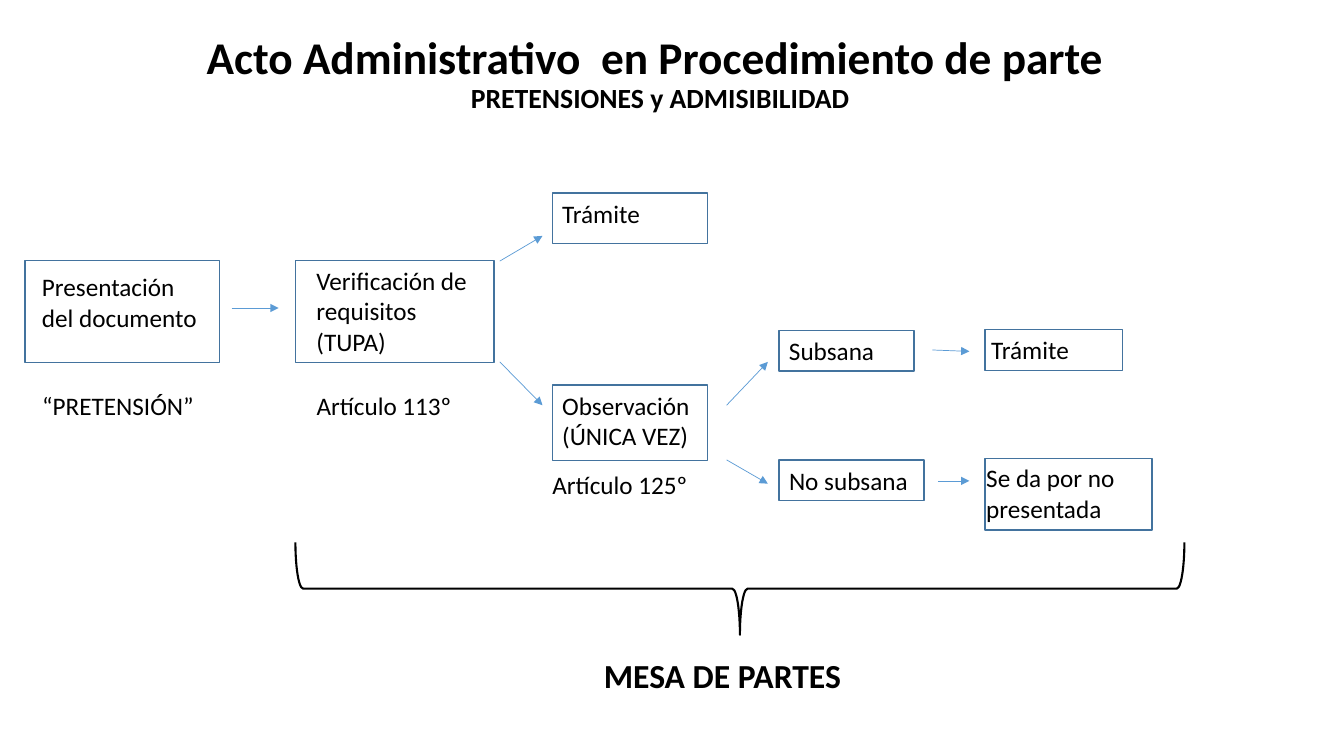
from lxml.etree import SubElement
from pptx import Presentation
from pptx.dml.color import RGBColor
from pptx.enum.shapes import MSO_CONNECTOR, MSO_SHAPE
from pptx.enum.text import MSO_ANCHOR, MSO_AUTO_SIZE, PP_ALIGN
from pptx.oxml.ns import qn
from pptx.util import Pt

FONT = "Calibri"
BLACK, EDGE, ARROW = "000000", "43739E", "5B9BD5"

# Left edges of the columns
FIRST, CHECK, RESULT, REPLY, FINAL = 18, 211, 394.5, 556.5, 703.5

# Left, top, width, height, lines, insets (left, top, right)
STEPS = [
    (FIRST, 186, 139, 73, ["Presentación del documento"], (12, 8, 12)),
    (CHECK, 186, 142, 73, ["Verificación de requisitos (TUPA)"], (15, 3.6, 12)),
    (RESULT, 138, 111, 36, ["Trámite"], (7.2, 3.6, 7.2)),
    (RESULT, 275, 111, 54, ["Observación", "(ÚNICA VEZ)"], (7.2, 3.6, 7.2)),
    (REPLY, 236, 96.5, 29, ["Subsana"], (7.2, 3.6, 7.2)),
    (REPLY, 328.5, 103.5, 29, ["No subsana"], (7.2, 3.6, 7.2)),
    (FINAL, 235.5, 98.5, 29, ["Trámite"], (4.5, 3.6, 4.5)),
    (FINAL, 327.5, 119.5, 51, ["Se da por no presentada"], (1, 3, 14)),
]

# Left, top, width, text
NOTES = [
    (23, 275, 134, "“PRETENSIÓN”"),
    (219, 275, 120, "Artículo 113º"),
    (387.5, 332, 118, "Artículo 125º"),
]

# Start x, start y, end x, end y
ARROWS = [
    (165.5, 220, 199, 220),
    (357, 186.5, 387.5, 168.5),
    (357, 258.5, 387.5, 289.5),
    (519, 289.5, 548.5, 258.5),
    (519, 328.5, 548.5, 345.5),
    (666, 250, 692.5, 251),
    (670, 343.5, 692.5, 343.5),
]


def color(code):
    return RGBColor.from_string(code)


def add_run(para, text, size=18, bold=False):
    run = para.add_run()
    run.text = text
    run.font.name = FONT
    run.font.size = Pt(size)
    run.font.bold = bold
    run.font.color.rgb = color(BLACK)


def add_title(slide):
    title = slide.shapes.title
    title.left, title.top = Pt(111.5), Pt(30)
    title.width, title.height = Pt(720), Pt(55.5)
    frame = title.text_frame
    frame.auto_size = MSO_AUTO_SIZE.NONE
    frame.vertical_anchor = MSO_ANCHOR.BOTTOM
    para = frame.paragraphs[0]
    para.alignment = PP_ALIGN.CENTER
    para.line_spacing = 0.9
    add_run(para, "Acto Administrativo  en Procedimiento de parte ", 32.4, True)
    para.add_line_break()
    add_run(para, "PRETENSIONES y ADMISIBILIDAD", 19.8, True)


def add_outline(slide, kind, left, top, width, height, line, weight):
    shape = slide.shapes.add_shape(kind, Pt(left), Pt(top), Pt(width), Pt(height))
    shape.shadow.inherit = False
    shape.fill.background()
    shape.line.color.rgb = color(line)
    shape.line.width = Pt(weight)
    return shape


def add_step(slide, left, top, width, height, lines, insets):
    box = add_outline(slide, MSO_SHAPE.RECTANGLE, left, top, width, height, EDGE, 1)
    frame = box.text_frame
    frame.word_wrap = True
    frame.vertical_anchor = MSO_ANCHOR.TOP
    frame.margin_left, frame.margin_top, frame.margin_right = map(Pt, insets)
    frame.margin_bottom = 0
    for i, text in enumerate(lines):
        para = frame.add_paragraph() if i else frame.paragraphs[0]
        para.alignment = PP_ALIGN.LEFT
        add_run(para, text)


def add_note(slide, left, top, width, text, size=18, bold=False, align=PP_ALIGN.LEFT):
    box = slide.shapes.add_textbox(Pt(left), Pt(top), Pt(width), Pt(size * 1.2 + 7.2))
    box.text_frame.word_wrap = True
    para = box.text_frame.paragraphs[0]
    para.alignment = align
    add_run(para, text, size, bold)


def add_arrow(slide, *ends):
    link = slide.shapes.add_connector(MSO_CONNECTOR.STRAIGHT, *map(Pt, ends))
    link.line.color.rgb = color(ARROW)
    link.line.width = Pt(0.5)
    SubElement(link.line._get_or_add_ln(), qn("a:tailEnd"), type="triangle")
    SubElement(link._element.spPr, qn("a:effectLst"))


def main():
    deck = Presentation()
    deck.slide_width, deck.slide_height = Pt(960), Pt(540)
    slide = deck.slides.add_slide(deck.slide_layouts[5])

    add_title(slide)

    # Flow of the procedure
    for step in STEPS:
        add_step(slide, *step)
    for note in NOTES:
        add_note(slide, *note)
    for arrow in ARROWS:
        add_arrow(slide, *arrow)

    # Brace over the responsible office
    brace = add_outline(slide, MSO_SHAPE.RIGHT_BRACE, 495.5, 103, 66, 635, BLACK, 1.5)
    brace.rotation = 90
    add_note(slide, 347, 464.5, 343.5, "MESA DE PARTES ", 24, True, PP_ALIGN.CENTER)

    deck.save("out.pptx")


if __name__ == "__main__":
    main()
